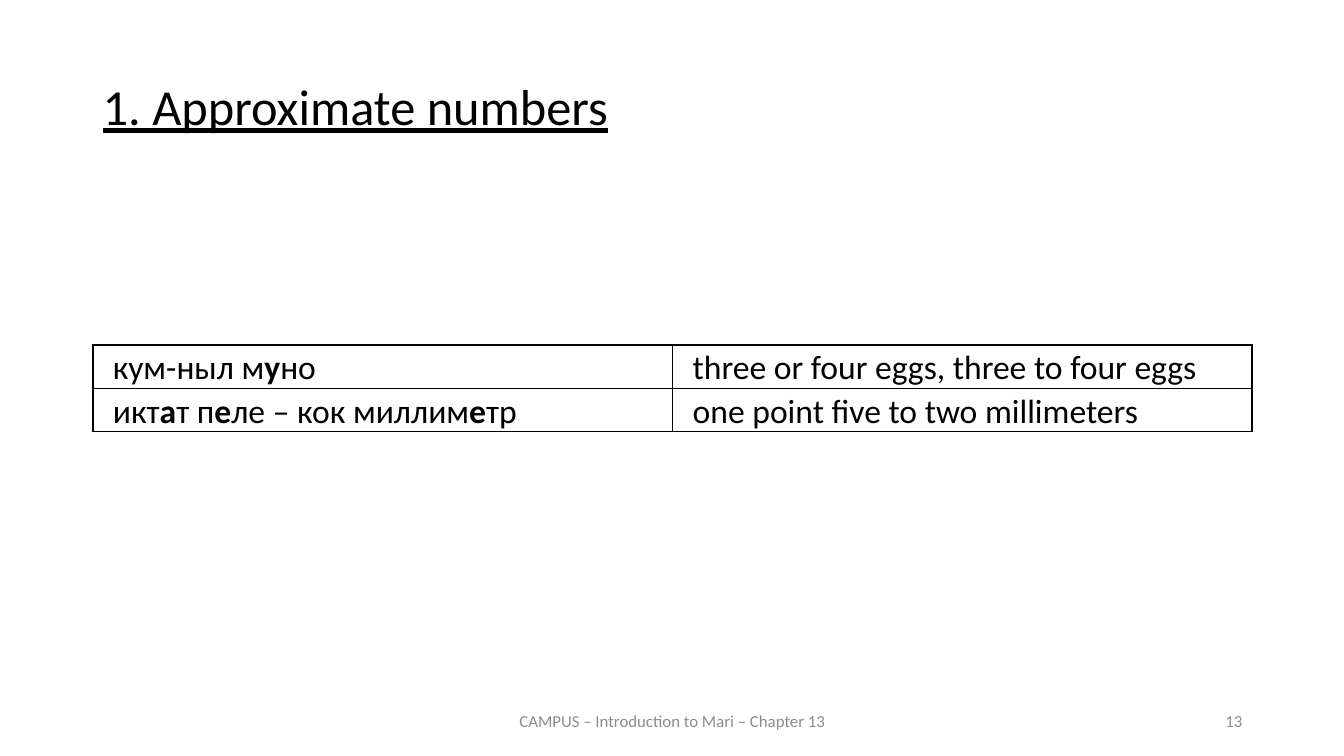
"""Build the slide on approximate numbers in Mari."""
from lxml import etree
from pptx import Presentation
from pptx import util as u
from pptx.dml.color import RGBColor
from pptx.enum import text
from pptx.oxml.ns import qn

BLACK = RGBColor(0x00, 0x00, 0x00)
GREY = RGBColor(0x8C, 0x8C, 0x8C)


def write(frame, content, size=24, color=BLACK, align=text.PP_ALIGN.JUSTIFY, underline=None):
    """Fill the first paragraph; parts between asterisks are bold."""
    frame.word_wrap = True
    para = frame.paragraphs[0]
    para.alignment = align
    for index, part in enumerate(content.split("*")):
        span = para.add_run()
        span.text = part
        span.font.name = "Calibri"
        span.font.size = u.Pt(size)
        span.font.color.rgb = color
        span.font.bold = index % 2 == 1
        span.font.underline = underline
    return para


deck = Presentation()
deck.slide_width = u.Inches(13.33)
deck.slide_height = u.Inches(7.5)
page = deck.slides.add_slide(deck.slide_layouts[6])

title = page.shapes.add_textbox(u.Inches(0.92), u.Inches(0.76), u.Inches(11.5), u.Inches(0.99))
heading = write(title.text_frame, "1. Approximate numbers", size=36, underline=True)
heading.line_spacing = 0.9
heading.space_before = u.Pt(12)

footers = [
    (4.42, 4.5, "CAMPUS – Introduction to Mari – Chapter 13", text.PP_ALIGN.CENTER),
    (9.42, 3, "13", text.PP_ALIGN.RIGHT),
]
for left, width, content, align in footers:
    box = page.shapes.add_textbox(u.Inches(left), u.Inches(6.95), u.Inches(width), u.Inches(0.4))
    box.text_frame.vertical_anchor = text.MSO_ANCHOR.MIDDLE
    write(box.text_frame, content, size=12, color=GREY, align=align)

examples = [
    ("кум-ныл м*у*но", "three or four eggs, three to four eggs"),
    ("икт*а*т п*е*ле – кок миллим*е*тр", "one point five to two millimeters"),
]
table = page.shapes.add_table(
    2, 2, u.Inches(0.92), u.Inches(3.42), u.Inches(11.5), u.Inches(0.86)
).table
table.first_row = False
table.horz_banding = False
for row, example in enumerate(examples):
    for column, content in enumerate(example):
        cell = table.cell(row, column)
        cell.margin_left = cell.margin_right = u.Inches(0.2)
        cell.margin_top = u.Inches(0.03)
        cell.margin_bottom = 0
        write(cell.text_frame, content)
        outer_edges = ("lnL" if column == 0 else "lnR", "lnT" if row == 0 else "lnB")
        properties = cell._tc.get_or_add_tcPr()
        for edge in ("lnL", "lnR", "lnT", "lnB"):
            width = u.Pt(1.5 if edge in outer_edges else 1)
            line = etree.SubElement(properties, qn(f"a:{edge}"), w=str(width))
            fill = etree.SubElement(line, qn("a:solidFill"))
            etree.SubElement(fill, qn("a:srgbClr"), val=str(BLACK))
        cell.fill.background()

deck.save("out.pptx")
